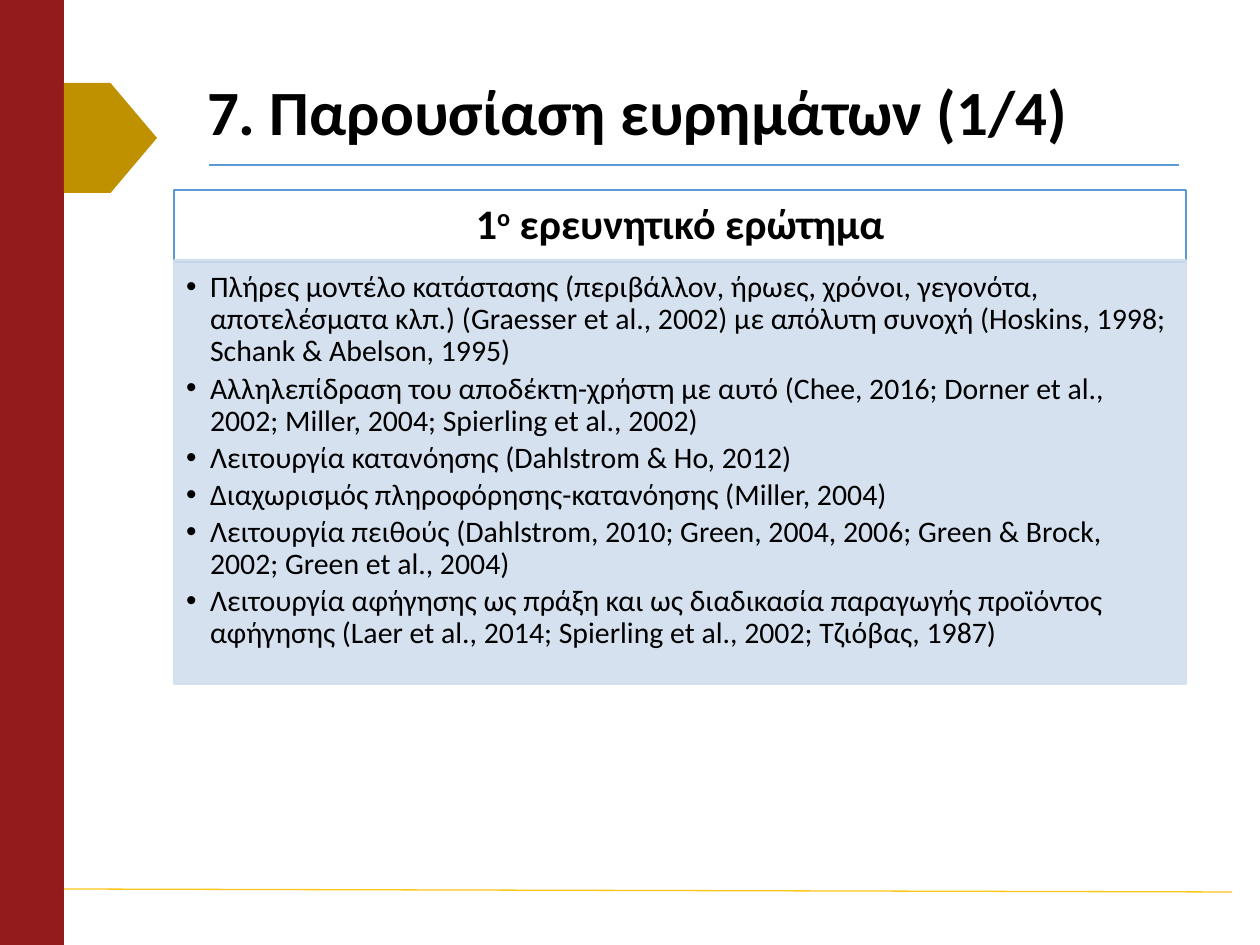
from lxml import etree
from pptx import Presentation
from pptx.dml.color import RGBColor
from pptx.enum.shapes import MSO_CONNECTOR, MSO_SHAPE
from pptx.enum.text import MSO_ANCHOR, MSO_AUTO_SIZE, PP_ALIGN
from pptx.oxml.ns import qn
from pptx.util import Emu, Pt

TITLE = "7. Παρουσίαση ευρημάτων (1/4)"
QUESTION = [("1", 0), ("ο", 30), (" ερευνητικό ερώτημα", 0)]  # text, raised by %
FINDINGS = [
    "Πλήρες μοντέλο κατάστασης (περιβάλλον, ήρωες, χρόνοι, γεγονότα, αποτελέσματα κλπ.) "
    "(Graesser et al., 2002) με απόλυτη συνοχή (Hoskins, 1998; Schank & Abelson, 1995)",
    "Αλληλεπίδραση του αποδέκτη-χρήστη με αυτό (Chee, 2016; Dorner et al., 2002; "
    "Miller, 2004; Spierling et al., 2002)",
    "Λειτουργία κατανόησης (Dahlstrom & Ho, 2012)",
    "Διαχωρισμός πληροφόρησης-κατανόησης (Miller, 2004)",
    "Λειτουργία πειθούς (Dahlstrom, 2010; Green, 2004, 2006; Green & Brock, 2002; "
    "Green et al., 2004)",
    "Λειτουργία αφήγησης ως πράξη και ως διαδικασία παραγωγής προϊόντος αφήγησης "
    "(Laer et al., 2014; Spierling et al., 2002; Τζιόβας, 1987)",
]
BLOCKS = [  # preset, box, colour
    (MSO_SHAPE.RECTANGLE, (0, 0, 64, 945), "931B1B"),
    (MSO_SHAPE.PENTAGON, (64, 83, 93, 110), "BF9000"),
]
RULES = [((209, 165, 1179, 165), "5B9BD5"), ((64, 889, 1232, 892), "FFC61A")]
TITLE_BOX = (194, 76, 992, 79)
HEADER_BOX = (174, 190, 1012, 72)
PANEL_BOX = (174, 260, 1012, 424)
PANEL_COLOR = "D2DEEF"
INDENT = 24


def px(n):
    return Emu(round(n * 914400 / 126))


def rgb(value):
    return RGBColor.from_string(value)


def place(shape, box):
    shape.left, shape.top, shape.width, shape.height = map(px, box)


def set_frame(tf, anchor, insets):
    tf.word_wrap = True
    tf.auto_size = MSO_AUTO_SIZE.NONE
    tf.vertical_anchor = anchor
    tf.margin_left, tf.margin_top, tf.margin_right, tf.margin_bottom = map(px, insets)


def format_paragraph(p, size, bold=False, align=PP_ALIGN.LEFT, after=0):
    p.alignment = align
    p.line_spacing = 0.9
    p.space_before, p.space_after = Pt(0), Pt(after)
    for r in p.runs:
        r.font.name, r.font.size, r.font.bold = "Calibri", Pt(size), bold
        r.font.color.rgb = rgb("000000")


def set_opacity(shape, percent):
    for color in shape._element.spPr.iter(qn("a:srgbClr")):
        etree.SubElement(color, qn("a:alpha"), val=str(percent * 1000))


def add_block(s, preset, box, color=None):
    sp = s.shapes.add_shape(preset, *map(px, box))
    sp.shadow.inherit = False
    if color:
        sp.fill.solid()
        sp.fill.fore_color.rgb = rgb(color)
        sp.line.fill.background()
    else:
        sp.fill.background()
    return sp


def add_rule(s, ends, color):
    line = s.shapes.add_connector(MSO_CONNECTOR.STRAIGHT, *map(px, ends))
    line.line.color.rgb = rgb(color)
    line.line.width = Pt(0.75)
    etree.SubElement(line._element.spPr, qn("a:effectLst"))


def add_header(s):
    sp = add_block(s, MSO_SHAPE.RECTANGLE, HEADER_BOX)
    sp.line.color.rgb = rgb("5B9BD5")
    sp.line.width = Pt(1)
    set_frame(sp.text_frame, MSO_ANCHOR.MIDDLE, (24, 14, 24, 14))
    p = sp.text_frame.paragraphs[0]
    for text, raised in QUESTION:
        r = p.add_run()
        r.text = text
        if raised:
            r.font._element.set("baseline", str(raised * 1000))
    format_paragraph(p, 24, bold=True, align=PP_ALIGN.CENTER)
    return sp


def fill_panel(body):
    place(body, PANEL_BOX)
    body.fill.solid()
    body.fill.fore_color.rgb = body.line.color.rgb = rgb(PANEL_COLOR)
    body.line.width = Pt(1)
    set_opacity(body, 90)
    tf = body.text_frame
    tf.text = "\n".join(FINDINGS)
    set_frame(tf, MSO_ANCHOR.TOP, (12, 12, 16, 19))
    for p in tf.paragraphs:
        format_paragraph(p, 17, after=2.8)
        pPr = p._p.get_or_add_pPr()
        pPr.set("marL", str(px(INDENT)))
        pPr.set("indent", str(px(-INDENT)))


def main():
    prs = Presentation()
    prs.slide_width, prs.slide_height = px(1260), px(945)
    s = prs.slides.add_slide(prs.slide_layouts[1])
    title, body = s.placeholders

    place(title, TITLE_BOX)
    title.text_frame.text = TITLE
    set_frame(title.text_frame, MSO_ANCHOR.MIDDLE, (13, 6, 13, 6))
    format_paragraph(title.text_frame.paragraphs[0], 36, bold=True)

    for block in BLOCKS:
        add_block(s, *block)
    for rule in RULES:
        add_rule(s, *rule)

    header = add_header(s)
    fill_panel(body)
    header._element.addnext(body._element)  # the panel overlaps the header's lower edge
    prs.save("out.pptx")


if __name__ == "__main__":
    main()
